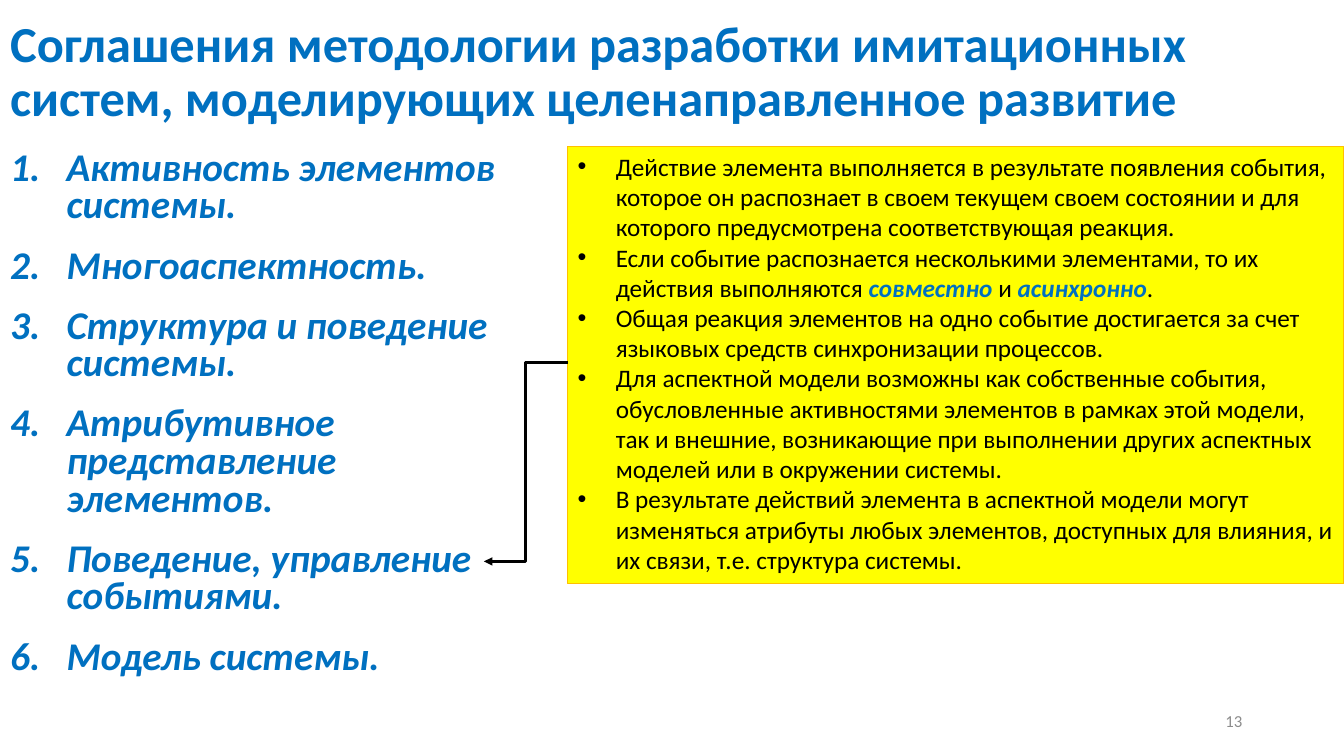
from pptx import Presentation
from pptx.dml.color import RGBColor
from pptx.enum.shapes import MSO_CONNECTOR, MSO_SHAPE
from pptx.enum.text import MSO_ANCHOR, MSO_AUTO_SIZE, PP_ALIGN
from pptx.oxml.ns import qn
from pptx.util import Inches, Pt
from lxml.etree import SubElement

WIDE, HIGH = 13.33, 7.5
BLUE, BLACK, GREY = "0070C0", "000000", "8C8C8C"
TITLE = "Соглашения методологии разработки имитационных систем, моделирующих целенаправленное развитие"
RULES = [
    ["Активность элементов ", "системы."],
    ["Многоаспектность."],
    ["Структура и поведение", "системы."],
    ["Атрибутивное ", "представление ", "элементов."],
    ["Поведение, управление ", "событиями."],
    ["Модель системы."],
]
NOTES = [
    [("Действие элемента выполняется в результате появления события, которое он распознает в своем текущем своем состоянии и для которого предусмотрена соответствующая реакция.", False)],
    [("Если событие распознается несколькими элементами, то их действия выполняются ", False),
     ("совместно ", True), ("и ", False), ("асинхронно", True), (".", False)],
    [("Общая реакция элементов на одно событие достигается за счет языковых средств синхронизации процессов.", False)],
    [("Для аспектной модели возможны как собственные события, обусловленные активностями элементов в рамках этой модели, так и внешние, возникающие при выполнении других аспектных моделей или в окружении системы.", False)],
    [("В результате действий элемента в аспектной модели могут изменяться атрибуты любых элементов, доступных для влияния, и их связи, т.е. структура системы.", False)],
]
PAGE = "13"


def tint(code):
    return RGBColor.from_string(code)


def place(shape, *spot):
    shape.left, shape.top, shape.width, shape.height = map(Inches, spot)


def setup(shape, anchor):
    frame = shape.text_frame
    frame.word_wrap = True
    frame.auto_size = MSO_AUTO_SIZE.NONE
    frame.vertical_anchor = anchor
    return frame


def write(para, text, size, color, bold=False, slant=False):
    run = para.add_run()
    run.text = text
    font = run.font
    font.name, font.size = "Calibri", Pt(size)
    font.bold, font.italic = bold, slant
    font.color.rgb = tint(color)


def lines(frame, count):
    return [frame.paragraphs[0]] + [frame.add_paragraph() for _ in range(count - 1)]


def mark(para, indent, tag, **attrs):
    para.alignment = PP_ALIGN.LEFT
    props = para._p.get_or_add_pPr()
    props.set("marL", str(Inches(indent)))
    props.set("indent", str(-Inches(indent)))
    if tag == "a:buChar":
        SubElement(props, qn("a:buFont"), typeface="Arial")
    SubElement(props, qn(tag), **attrs)


deck = Presentation()
deck.slide_width, deck.slide_height = Inches(WIDE), Inches(HIGH)
slide = deck.slides.add_slide(deck.slide_layouts[1])
title, body = slide.placeholders
top, left = 1.45, 5.63
wide = WIDE - 0.24

place(title, 0, 0, wide, top)
head = setup(title, MSO_ANCHOR.MIDDLE).paragraphs[0]
head.alignment, head.line_spacing = PP_ALIGN.LEFT, 0.9
write(head, TITLE, 36, BLUE, True)

place(body, 0, top, wide, 5.34)
frame = setup(body, MSO_ANCHOR.TOP)
for para, parts in zip(lines(frame, len(RULES)), RULES):
    para.line_spacing = 0.8
    para.space_before, para.space_after = Pt(10), Pt(6)
    mark(para, 0.56, "a:buAutoNum", type="arabicPeriod")
    for i, part in enumerate(parts):
        if i:
            para.add_line_break()
        write(para, part, 28, BLUE, True, True)

box = slide.shapes.add_shape(MSO_SHAPE.RECTANGLE, 0, 0, 0, 0)
place(box, left, top, WIDE - left, 4.34)
box.shadow.inherit = False
box.fill.solid()
box.fill.fore_color.rgb = tint("FFFF00")
box.line.color.rgb = tint("FFC000")
box.line.width = Pt(0.75)
frame = setup(box, MSO_ANCHOR.TOP)
for para, parts in zip(lines(frame, len(NOTES)), NOTES):
    mark(para, 0.38, "a:buChar", char="•")
    for text, key in parts:
        write(para, text, 18, BLUE if key else BLACK, key, key)

ends = map(Inches, (left, 3.6, 4.8, 5.57))
link = slide.shapes.add_connector(MSO_CONNECTOR.ELBOW, *ends)
link.line.color.rgb = tint(BLACK)
link.line.width = Pt(2)
SubElement(link.line._get_or_add_ln(), qn("a:tailEnd"), type="triangle")
SubElement(link._element.spPr, qn("a:effectLst"))

page = slide.shapes.add_textbox(0, 0, 0, 0)
place(page, 9.42, 6.95, 3, 0.4)
para = setup(page, MSO_ANCHOR.MIDDLE).paragraphs[0]
para.alignment = PP_ALIGN.RIGHT
write(para, PAGE, 12, GREY)

deck.save("out.pptx")
